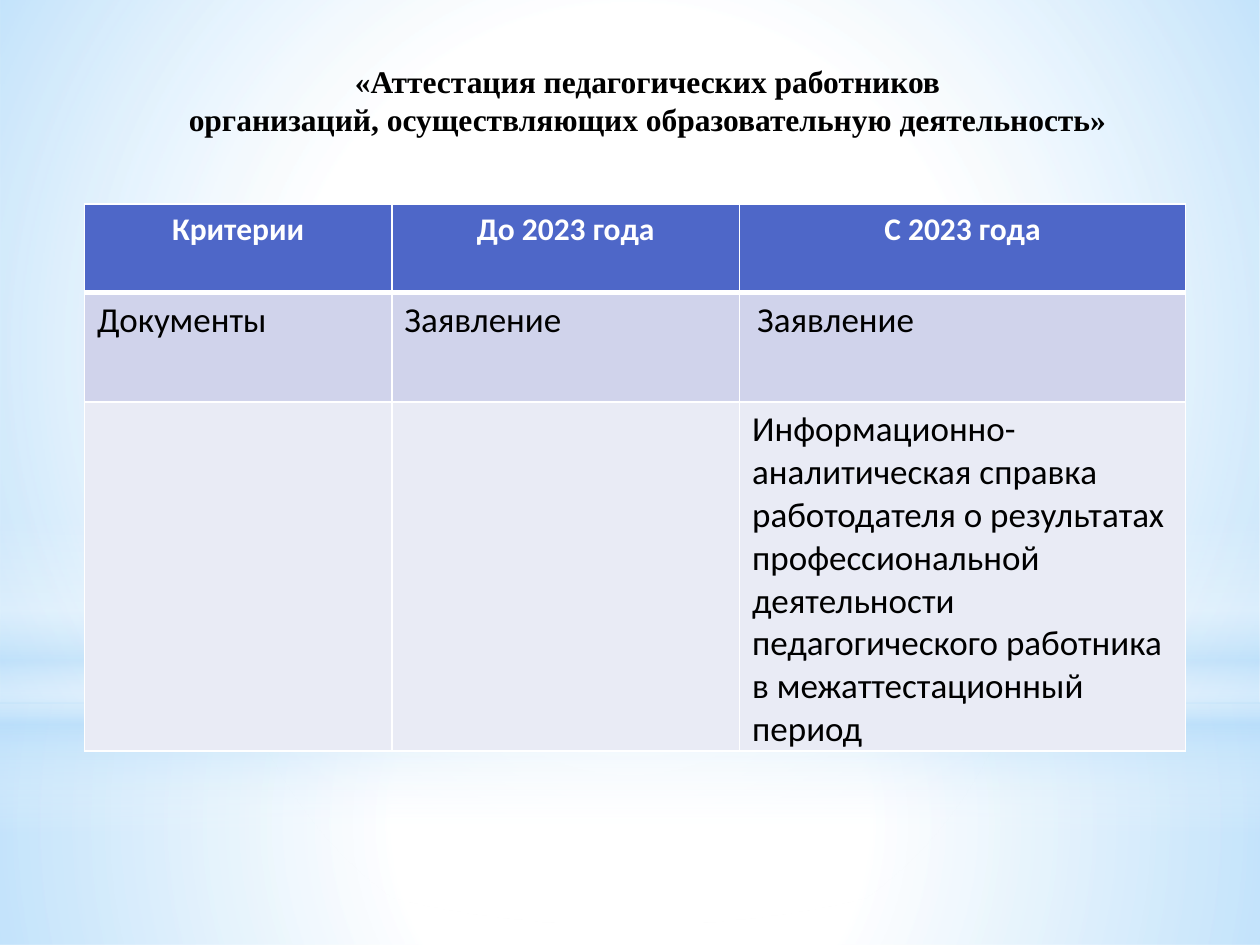
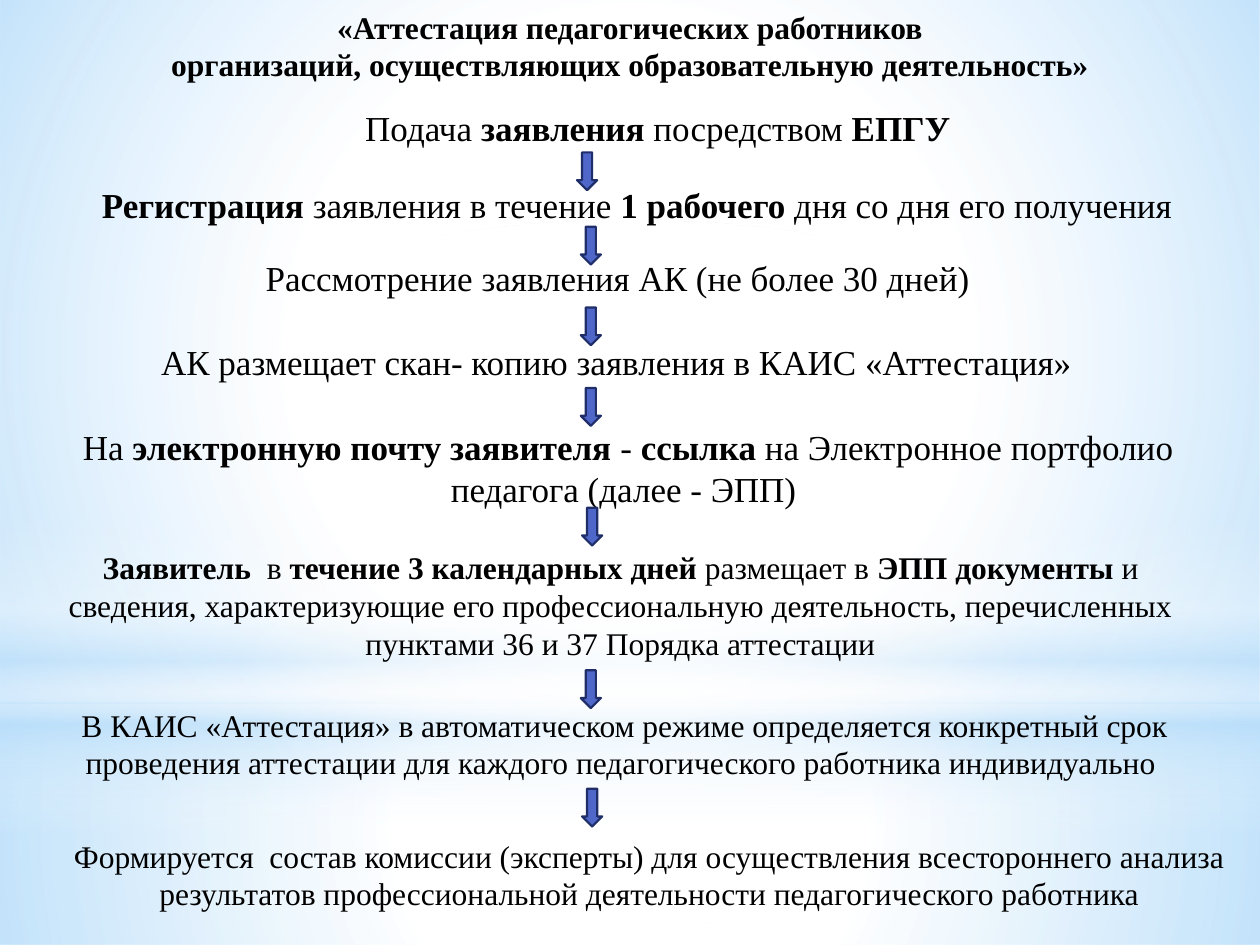
from pptx import Presentation
from pptx.dml.color import RGBColor
from pptx.enum.shapes import MSO_SHAPE
from pptx.enum.text import MSO_ANCHOR, MSO_AUTO_SIZE, PP_ALIGN
from pptx.oxml import parse_xml
from pptx.oxml.ns import nsdecls, qn
from pptx.util import Inches, Pt

COLOURS = {
    "white": "FFFFFF",
    "sky": "B4DCFA",
    "blue": "4E67C8",
    "navy": "1F2E69",
    "lavender": "D0D3EB",
    "mist": "E9EBF5",
    "text": "000000",
}
SERIF, SANS = "Times New Roman", "Calibri"
TITLE = "«Аттестация педагогических работников\vорганизаций, осуществляющих образовательную деятельность»"
TITLE_FONT = {"size": Pt(18), "name": SERIF, "bold": True}

CIRCLE = '<a:path path="circle"><a:fillToRect l="50000" t="50000" r="50000" b="50000"/></a:path>'
DOWNWARD = '<a:lin ang="5400000" scaled="0"/>'
BACKDROP = [
    (MSO_SHAPE.RECTANGLE, (0, 5.58, 10, 1.92), CIRCLE,
     [(0, "white", 91), (37, "white", 76), (100, "sky", 79)]),
    (MSO_SHAPE.RECTANGLE, (0, 0, 10, 5.58), CIRCLE,
     [(0, "white", 89), (48, "white", 62), (100, "sky", 79)]),
    (MSO_SHAPE.RECTANGLE, (0, 4.12, 10, 2.5), DOWNWARD,
     [(0, "white", 0), (29, "white", 30), (45, "sky", 40),
      (55, "white", 26), (65, "sky", 60), (100, "white", 0)]),
    (MSO_SHAPE.OVAL, (0, 1.75, 10, 5.58), CIRCLE,
     [(0, "white", 100), (56, "white", 0)]),
]

CRITERIA = [
    ["Критерии", "До 2023 года", "С 2023 года"],
    ["Документы", "Заявление", "Заявление"],
    ["", "", "Информационно-аналитическая справка работодателя о результатах "
             "профессиональной деятельности педагогического работника "
             "в межаттестационный период"],
]
COLUMN_WIDTHS = [2.44, 2.76, 3.54]
ROW_HEIGHTS = [0.7, 0.87, 2.76]
ROW_FILLS = ["blue", "lavender", "mist"]

LEFT, CENTRE = PP_ALIGN.LEFT, PP_ALIGN.CENTER
STEPS = [
    ((2.8, 0.8, 4.88, 0.44), 20, LEFT, False,
     "Подача **заявления** посредством **ЕПГУ**"),
    ((0.71, 1.41, 8.72, 0.44), 20, LEFT, False,
     "**Регистрация** заявления в течение **1 рабочего** дня со дня его получения"),
    ((2.01, 1.99, 5.84, 0.44), 20, LEFT, False,
     "Рассмотрение заявления АК (не более 30 дней)"),
    ((1.18, 2.65, 7.56, 0.44), 20, LEFT, True,
     "АК размещает скан- копию заявления в КАИС «Аттестация»"),
    ((0.22, 3.33, 9.53, 0.77), 20, CENTRE, True,
     "На **электронную почту заявителя **- **ссылка **на Электронное портфолио "
     "педагога (далее - ЭПП) "),
    ((0.22, 4.3, 9.41, 1.01), 18, CENTRE, True,
     "**Заявитель  **в **течение 3 календарных дней **размещает в **ЭПП документы **"
     "и сведения, характеризующие его профессиональную деятельность, "
     "перечисленных пунктами 36 и 37 Порядка аттестации"),
    ((0.43, 5.55, 9.06, 0.71), 18, CENTRE, True,
     "В КАИС «Аттестация» в автоматическом режиме определяется конкретный срок "
     "проведения аттестации для каждого педагогического работника индивидуально "),
    ((0.39, 6.59, 9.53, 0.71), 18, CENTRE, True,
     "Формируется  состав комиссии (эксперты) для осуществления всестороннего анализа "
     "результатов профессиональной деятельности педагогического работника"),
]
ARROW_CORNERS = [(4.58, 1.21), (4.61, 1.8), (4.61, 2.44), (4.61, 3.08),
                 (4.62, 4.03), (4.61, 5.32), (4.62, 6.26)]
ARROW_SIZE = (0.16, 0.3)


def colour(name):
    """Return the named palette colour."""
    return RGBColor.from_string(COLOURS[name])


def inches(box):
    """Convert a sequence of numbers to lengths."""
    return [Inches(value) for value in box]


def set_attributes(target, values):
    """Set each named attribute on the target."""
    for name, value in values.items():
        setattr(target, name, value)


def format_font(font, values, colour_name="text"):
    """Apply font values and a palette colour."""
    set_attributes(font, values)
    font.color.rgb = colour(colour_name)


def gradient_fill(stops, direction):
    """Return a gradient fill with translucent stops."""
    stop_xml = "".join(
        f'<a:gs pos="{position * 1000}"><a:srgbClr val="{COLOURS[name]}">'
        f'<a:alpha val="{opacity * 1000}"/></a:srgbClr></a:gs>'
        for position, name, opacity in stops)
    return parse_xml(f'<a:gradFill {nsdecls("a")} rotWithShape="1">'
                     f'<a:gsLst>{stop_xml}</a:gsLst>{direction}</a:gradFill>')


def move_backdrop_to_master(presentation, slide):
    """Draw the shared glowing backdrop and place it on the slide master."""
    master_tree = presentation.slide_master.shapes.element
    for index, (kind, box, direction, stops) in enumerate(BACKDROP):
        shape = slide.shapes.add_shape(kind, *inches(box))
        shape.shadow.inherit = False
        shape.line.fill.background()
        geometry = shape.element.spPr.find(qn("a:prstGeom"))
        geometry.addnext(gradient_fill(stops, direction))
        shape.element.nvSpPr.cNvPr.set("id", str(100 + index))
        master_tree.insert(2 + index, shape.element)


def add_titled_slide(presentation, box):
    """Add a slide with the shared title in the given box."""
    slide = presentation.slides.add_slide(presentation.slide_layouts[5])
    title = slide.shapes.title
    set_attributes(title, dict(zip(("left", "top", "width", "height"), inches(box))))
    frame = title.text_frame
    set_attributes(frame, {"auto_size": MSO_AUTO_SIZE.NONE,
                           "vertical_anchor": MSO_ANCHOR.TOP, "word_wrap": True})
    paragraph = frame.paragraphs[0]
    paragraph.text = TITLE
    paragraph.alignment = CENTRE
    for run in paragraph.runs:
        format_font(run.font, TITLE_FONT)
    return slide


def set_borders(cell, widths):
    """Draw white cell borders with widths in points by side."""
    properties = cell._tc.get_or_add_tcPr()
    for side in "LRTB":
        properties.append(parse_xml(
            f'<a:ln{side} {nsdecls("a")} w="{Pt(widths.get(side, 1))}"><a:solidFill>'
            f'<a:srgbClr val="{COLOURS["white"]}"/></a:solidFill></a:ln{side}>'))


def add_criteria_table(slide, box):
    """Add the comparison of required documents."""
    table = slide.shapes.add_table(3, 3, *inches(box)).table
    for column, width in zip(table.columns, COLUMN_WIDTHS):
        column.width = Inches(width)
    for row_index, texts in enumerate(CRITERIA):
        is_header = row_index == 0
        table.rows[row_index].height = Inches(ROW_HEIGHTS[row_index])
        for column_index, text in enumerate(texts):
            cell = table.cell(row_index, column_index)
            set_borders(cell, [{"B": 3}, {"T": 3}, {}][row_index])
            cell.fill.solid()
            cell.fill.fore_color.rgb = colour(ROW_FILLS[row_index])
            cell.margin_bottom = 0
            paragraph = cell.text_frame.paragraphs[0]
            paragraph.alignment = CENTRE if is_header else LEFT
            paragraph.text = text
            for run in paragraph.runs:
                format_font(run.font, {"name": SANS, "size": Pt(18 if is_header else 20),
                                       "bold": is_header},
                            "white" if is_header else "text")
    table.cell(1, 2).margin_left = Inches(0.14)


def add_step(slide, box, size, alignment, wraps, text):
    """Add one step, with bold parts between double asterisks."""
    frame = slide.shapes.add_textbox(*inches(box)).text_frame
    set_attributes(frame, {"word_wrap": wraps,
                           "auto_size": MSO_AUTO_SIZE.SHAPE_TO_FIT_TEXT})
    paragraph = frame.paragraphs[0]
    paragraph.alignment = alignment
    for index, part in enumerate(text.split("**")):
        if part:
            run = paragraph.add_run()
            run.text = part
            format_font(run.font, {"name": SERIF, "size": Pt(size),
                                   "bold": index % 2 == 1})


def add_step_arrow(slide, corner):
    """Add a down arrow between two steps."""
    arrow = slide.shapes.add_shape(MSO_SHAPE.DOWN_ARROW, *inches(corner + ARROW_SIZE))
    arrow.shadow.inherit = False
    arrow.fill.solid()
    arrow.fill.fore_color.rgb = colour("blue")
    arrow.line.color.rgb = colour("navy")
    arrow.line.width = Pt(1.25)


def main():
    """Build and save the presentation."""
    presentation = Presentation()
    presentation.slide_width, presentation.slide_height = inches((10, 7.5))
    criteria_slide = add_titled_slide(presentation, (0.85, 0.44, 8.58, 0.71))
    move_backdrop_to_master(presentation, criteria_slide)
    add_criteria_table(criteria_slide, (0.67, 1.62, sum(COLUMN_WIDTHS), sum(ROW_HEIGHTS)))
    procedure_slide = add_titled_slide(presentation, (0.47, 0.01, 9.06, 0.71))
    for step in STEPS:
        add_step(procedure_slide, *step)
    for corner in ARROW_CORNERS:
        add_step_arrow(procedure_slide, corner)
    presentation.save("out.pptx")


if __name__ == "__main__":
    main()
